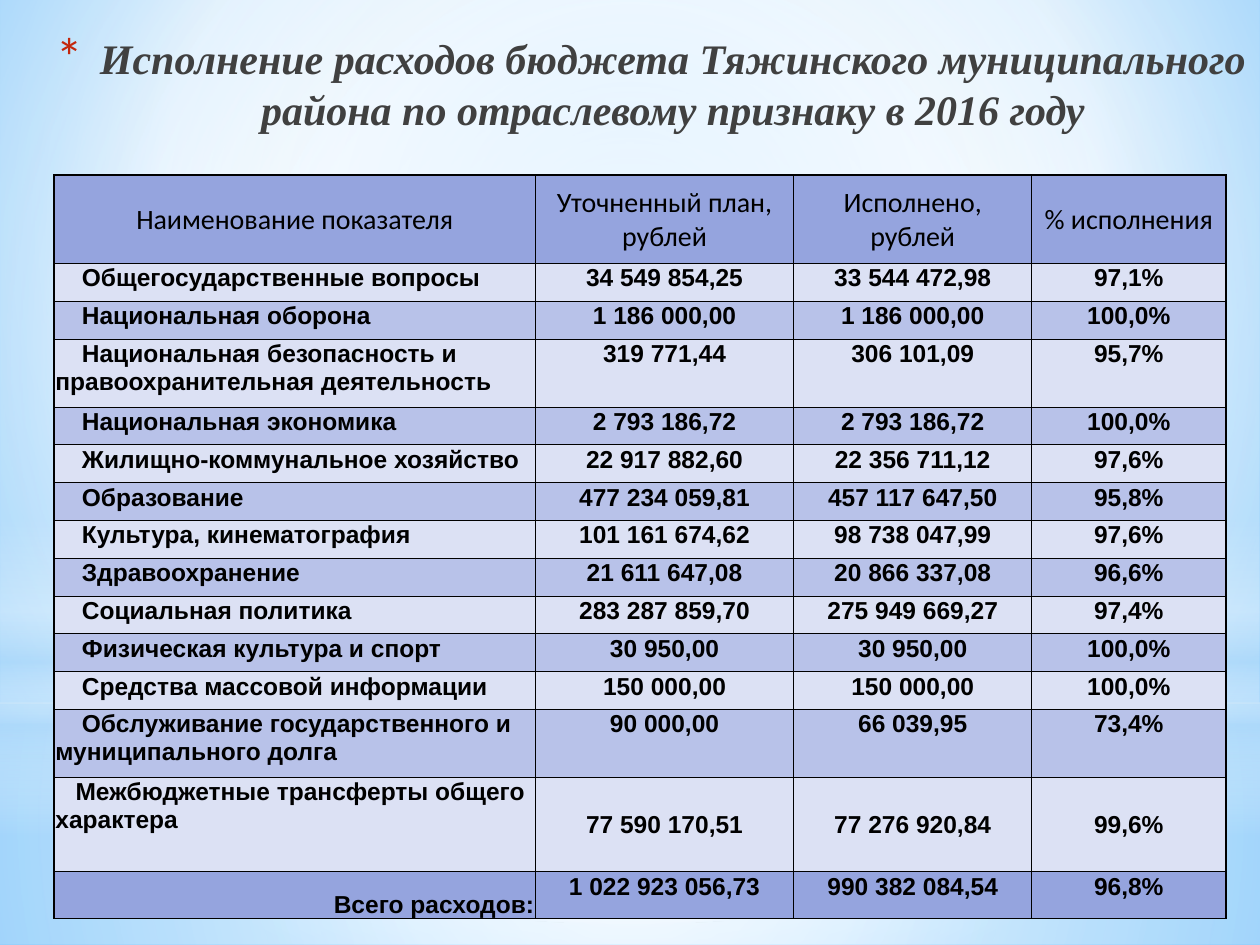
from dataclasses import dataclass
from typing import Optional

from lxml import etree
from pptx import Presentation, util as u
from pptx.dml.color import RGBColor
from pptx.enum import shapes, text
from pptx.oxml.ns import qn

WIDTH, HEIGHT = 10, 7.5
BLACK = RGBColor(0x00, 0x00, 0x00)
TITLE_GREY = RGBColor(0x40, 0x40, 0x40)
BULLET_RED = RGBColor(0xC3, 0x26, 0x0C)
HEADER_BLUE = RGBColor(0x95, 0xA4, 0xDE)
STRIPES = (RGBColor(0xB8, 0xC2, 0xE9), RGBColor(0xDC, 0xE1, 0xF4))
WHITE = RGBColor(0xFF, 0xFF, 0xFF)
HAZE = RGBColor(0xB4, 0xDC, 0xFA)
SKY_LIGHT = RGBColor(0x9E, 0xD5, 0xFF)
SKY_DEEP = RGBColor(0x5B, 0xB9, 0xFF)

LEFT, CENTER, RIGHT = text.PP_ALIGN.LEFT, text.PP_ALIGN.CENTER, text.PP_ALIGN.RIGHT
TOP, MIDDLE, BOTTOM = text.MSO_ANCHOR.TOP, text.MSO_ANCHOR.MIDDLE, text.MSO_ANCHOR.BOTTOM
CENTRE_FOCUS = (50, 50, 50, 50)


@dataclass
class Gradient:
    stops: tuple  # (position %, colour, opacity %)
    focus: Optional[tuple] = None  # left, top, right, bottom %; None is vertical


@dataclass
class Glow:
    kind: shapes.MSO_SHAPE
    top: float  # share of the slide's height
    height: float
    gradient: Gradient


@dataclass
class Row:
    cells: tuple
    height: float = 0.3
    indent: float = 0.21
    anchor: text.MSO_ANCHOR = TOP


SKY = Gradient(((0, SKY_LIGHT, 100), (60, WHITE, 100), (100, SKY_DEEP, 100)), (20, 10, 20, 60))
RECT, OVAL = shapes.MSO_SHAPE.RECTANGLE, shapes.MSO_SHAPE.OVAL
GLOWS = (
    Glow(RECT, 0.744, 0.256, Gradient(
        ((0, WHITE, 91), (37, WHITE, 76), (100, HAZE, 79)), CENTRE_FOCUS)),
    Glow(RECT, 0, 0.744, Gradient(
        ((0, WHITE, 89), (48, WHITE, 62), (100, HAZE, 79)), CENTRE_FOCUS)),
    Glow(RECT, 0.55, 0.333, Gradient(
        ((0, WHITE, 0), (29, WHITE, 30), (45, HAZE, 40),
         (55, WHITE, 26), (65, HAZE, 60), (100, WHITE, 0)))),
    Glow(OVAL, 0.233, 0.744, Gradient(((0, WHITE, 100), (56, WHITE, 0)), CENTRE_FOCUS)),
)

TITLE = "Исполнение расходов бюджета Тяжинского муниципального района по отраслевому признаку в 2016 году"
COLUMNS = (3.82, 2.05, 1.89, 1.54)
ROWS = (
    Row(("Наименование показателя", "Уточненный план,\nрублей",
         "Исполнено,\nрублей", "% исполнения"), 0.7, 0, MIDDLE),
    Row(("Общегосударственные вопросы", "34 549 854,25", "33 544 472,98", "97,1%")),
    Row(("Национальная оборона", "1 186 000,00", "1 186 000,00", "100,0%")),
    Row(("Национальная безопасность и правоохранительная деятельность",
         "319 771,44", "306 101,09", "95,7%"), 0.54),
    Row(("Национальная экономика", "2 793 186,72", "2 793 186,72", "100,0%")),
    Row(("Жилищно-коммунальное хозяйство", "22 917 882,60", "22 356 711,12", "97,6%")),
    Row(("Образование", "477 234 059,81", "457 117 647,50", "95,8%")),
    Row(("Культура, кинематография", "101 161 674,62", "98 738 047,99", "97,6%")),
    Row(("Здравоохранение", "21 611 647,08", "20 866 337,08", "96,6%")),
    Row(("Социальная политика", "283 287 859,70", "275 949 669,27", "97,4%")),
    Row(("Физическая культура и спорт", "30 950,00", "30 950,00", "100,0%")),
    Row(("Средства массовой информации", "150 000,00", "150 000,00", "100,0%")),
    Row(("Обслуживание государственного и муниципального долга",
         "90 000,00", "66 039,95", "73,4%"), 0.54),
    Row(("Межбюджетные трансферты общего характера",
         "77 590 170,51", "77 276 920,84", "99,6%"), 0.75, 0.16, MIDDLE),
    Row(("Всего расходов:", "1 022 923 056,73", "990 382 084,54", "96,8%"), 0.37, 0),
)


def add(parent, tag: str, **attributes):
    return etree.SubElement(parent, qn(tag), {k: str(v) for k, v in attributes.items()})


def paint_gradient(owner, element, gradient: Gradient) -> None:
    """Fill the owner (shape or background) with the gradient's stops."""
    owner.fill.gradient()
    fill = next(element.iter(qn("a:gradFill")))
    for child in list(fill):
        fill.remove(child)
    stops = add(fill, "a:gsLst")
    for position, color, opacity in gradient.stops:
        stop = add(stops, "a:gs", pos=position * 1000)
        add(add(stop, "a:srgbClr", val=color), "a:alpha", val=opacity * 1000)
    if gradient.focus:
        sides = {side: share * 1000 for side, share in zip("ltrb", gradient.focus)}
        add(add(fill, "a:path", path="circle"), "a:fillToRect", **sides)
    else:
        add(fill, "a:lin", ang=90 * 60000, scaled=1)


def draw_glow(page, glow: Glow) -> None:
    shape = page.shapes.add_shape(glow.kind, 0, u.Inches(glow.top * HEIGHT),
                                  u.Inches(WIDTH), u.Inches(glow.height * HEIGHT))
    shape.shadow.inherit = False
    shape.line.fill.background()
    paint_gradient(shape, shape.element, glow.gradient)


def style(para, font: str, size: float, color: RGBColor, bold=False, italic=False) -> None:
    for span in para.runs:
        span.font.name, span.font.size = font, u.Pt(size)
        span.font.bold, span.font.italic = bold, italic
        span.font.color.rgb = color


def draw_title(page) -> None:
    box = page.shapes.add_textbox(u.Inches(0.33), u.Inches(0.21), u.Inches(9.67), u.Inches(1.17))
    frame = box.text_frame
    frame.word_wrap = True
    frame.text = TITLE
    para = frame.paragraphs[0]
    para.alignment = CENTER
    style(para, "Times New Roman", 24, TITLE_GREY, bold=True, italic=True)
    properties = para._p.get_or_add_pPr()
    properties.set("marL", str(u.Inches(0.35)))
    properties.set("indent", str(-u.Inches(0.35)))
    add(add(properties, "a:buClr"), "a:srgbClr", val=BULLET_RED)
    add(properties, "a:buSzPct", val=128000)
    add(properties, "a:buFont", typeface="Calibri")
    add(properties, "a:buChar", char="*")


def draw_borders(cell, outer_sides: str) -> None:
    properties = cell._tc.get_or_add_tcPr()
    for index, side in enumerate("LRTB"):
        width = u.Pt(1 if side in outer_sides else 0.5)
        line = etree.Element(qn(f"a:ln{side}"), {"w": str(width)})
        add(add(line, "a:solidFill"), "a:srgbClr", val=BLACK)
        properties.insert(index, line)


def draw_table(page) -> None:
    table = page.shapes.add_table(
        len(ROWS), len(COLUMNS), u.Inches(0.43), u.Inches(1.39),
        u.Inches(sum(COLUMNS)), u.Inches(sum(row.height for row in ROWS))).table
    for column, width in zip(table.columns, COLUMNS):
        column.width = u.Inches(width)
    last_row, last_column = len(ROWS) - 1, len(COLUMNS) - 1
    for r, row in enumerate(ROWS):
        table.rows[r].height = u.Inches(row.height)
        header, total = r == 0, r == last_row
        for c, words in enumerate(row.cells):
            cell = table.cell(r, c)
            cell.margin_left = cell.margin_right = cell.margin_top = u.Inches(0.01)
            cell.margin_bottom = 0
            cell.fill.solid()
            cell.fill.fore_color.rgb = HEADER_BLUE if header or total else STRIPES[r % 2]
            cell.text_frame.text = words
            label = c == 0 and not header
            cell.vertical_anchor = (BOTTOM if total else TOP) if label else row.anchor
            for para in cell.text_frame.paragraphs:
                para.alignment = (RIGHT if total else LEFT) if label else CENTER
                if label and row.indent:
                    para._p.get_or_add_pPr().set("indent", str(u.Inches(row.indent)))
                style(para, "Calibri" if header else "Arial", 16 if header else 14,
                      BLACK, bold=not header)
            edges = (("L", c == 0), ("R", c == last_column), ("T", header), ("B", total))
            draw_borders(cell, "".join(side for side, outer in edges if outer))


def main() -> None:
    deck = Presentation()
    deck.slide_width, deck.slide_height = u.Inches(WIDTH), u.Inches(HEIGHT)
    page = deck.slides.add_slide(deck.slide_layouts[6])
    # Sky backdrop
    paint_gradient(page.background, page.element, SKY)
    for glow in GLOWS:
        draw_glow(page, glow)
    # Content
    draw_title(page)
    draw_table(page)
    deck.save("out.pptx")


if __name__ == "__main__":
    main()
